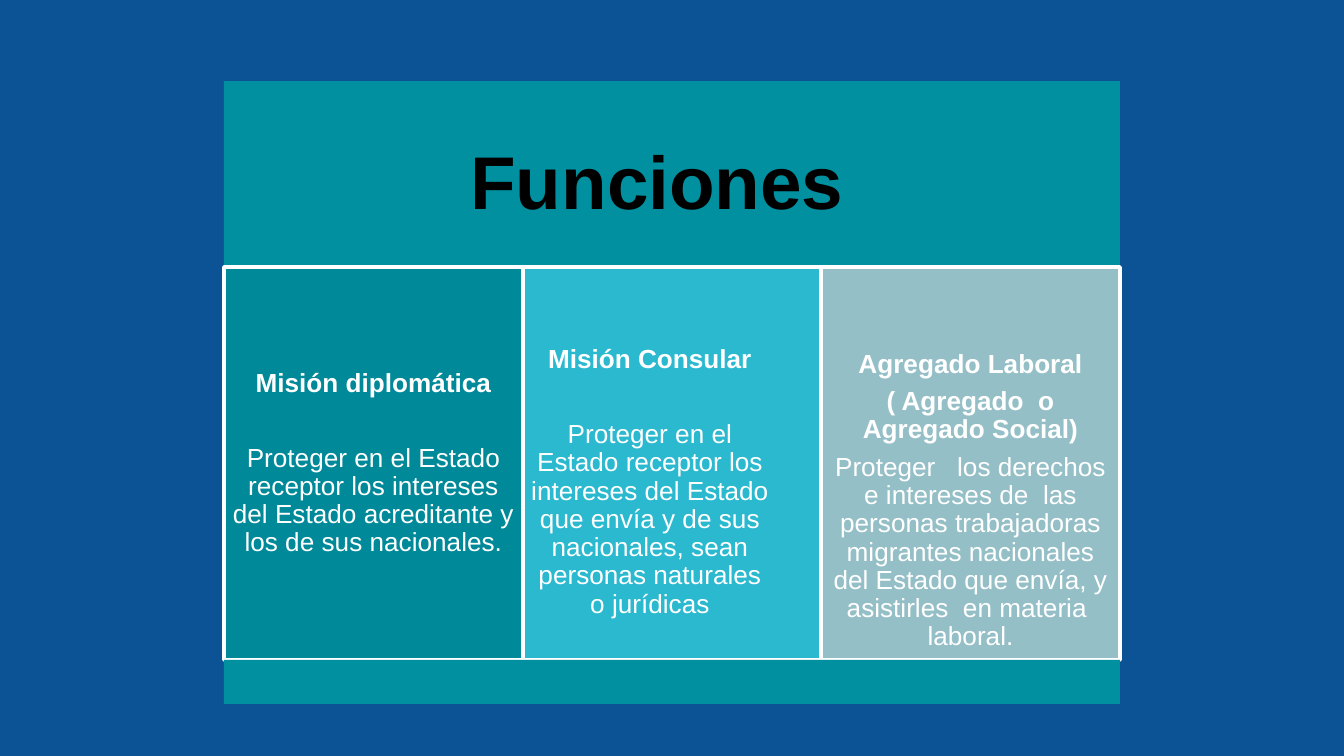
import pptx
import pptx.util
import pptx.dml.color
import pptx.enum.shapes
import pptx.enum.text

RGBColor = pptx.dml.color.RGBColor
NAVY = RGBColor(0x0B, 0x53, 0x94)
TEAL = RGBColor(0x00, 0x90, 0xA0)
DARK_TEAL = RGBColor(0x00, 0x89, 0x98)
CYAN = RGBColor(0x2B, 0xB9, 0xCF)
GREY_BLUE = RGBColor(0x95, 0xBF, 0xC7)
WHITE = RGBColor(0xFF, 0xFF, 0xFF)
BLACK = RGBColor(0x00, 0x00, 0x00)

LEFT, WIDTH = 224, 896
HEADER_TOP, COLUMNS_TOP, FOOTER_TOP, BOTTOM = 81, 267, 660, 704
PADDING = 8
EMPTY_LINE = 20

MISSIONS = [
    (DARK_TEAL, PADDING, [
        ("Misión diplomática", True, 0, 0),
        ("Proteger en el Estado receptor los intereses del Estado "
         "acreditante y los de sus nacionales.", False, EMPTY_LINE, 0),
    ]),
    (CYAN, 46, [
        ("Misión Consular", True, 0, 44),
        ("Proteger en el Estado receptor los intereses del Estado que envía "
         "y de sus nacionales, sean personas naturales o jurídicas",
         False, EMPTY_LINE, 0),
    ]),
    (GREY_BLUE, 83, [
        ("Agregado Laboral", True, 0, 0),
        ("( Agregado  o Agregado Social)", True, 0, 0),
        ("Proteger   los derechos e intereses de  las personas trabajadoras "
         "migrantes nacionales del Estado que envía, y asistirles  en materia  "
         "laboral.", False, 0, 0),
    ]),
]


def px(length):
    return pptx.util.Emu(round(length * 914400 / 134.4))


def add_panel(slide, left, top, right, bottom, fill, outlined=False):
    panel = slide.shapes.add_shape(
        pptx.enum.shapes.MSO_SHAPE.RECTANGLE,
        px(left), px(top), px(right - left), px(bottom - top))
    panel.shadow.inherit = False
    panel.fill.solid()
    panel.fill.fore_color.rgb = fill
    if outlined:
        panel.line.color.rgb = WHITE
        panel.line.width = pptx.util.Pt(2)
    else:
        panel.line.fill.background()
    return panel


def set_frame(panel, padding, top_padding):
    frame = panel.text_frame
    frame.word_wrap = True
    frame.vertical_anchor = pptx.enum.text.MSO_ANCHOR.MIDDLE
    frame.margin_left = frame.margin_right = frame.margin_bottom = px(padding)
    frame.margin_top = px(top_padding)
    return frame


def set_paragraph(paragraph, after, before=0, right_indent=0):
    paragraph.alignment = pptx.enum.text.PP_ALIGN.CENTER
    paragraph.line_spacing = 0.9
    paragraph.space_before = pptx.util.Pt(before)
    paragraph.space_after = pptx.util.Pt(after)
    if right_indent:
        paragraph._p.get_or_add_pPr().set("marR", str(px(right_indent)))


def add_run(paragraph, text, size, color, bold):
    run = paragraph.add_run()
    run.text = text
    run.font.name = "Arial"
    run.font.size = pptx.util.Pt(size)
    run.font.bold = bold
    run.font.color.rgb = color


def add_header(slide):
    header = add_panel(slide, LEFT, HEADER_TOP, LEFT + WIDTH, COLUMNS_TOP, TEAL)
    title = set_frame(header, 23, 23).paragraphs[0]
    set_paragraph(title, 20)
    add_run(title, "Funciones", 40, BLACK, True)
    add_run(title, " ", 58, BLACK, False)


def add_mission(slide, index, fill, top_padding, paragraphs):
    left, right = (LEFT + round(WIDTH * edge / len(MISSIONS))
                   for edge in (index, index + 1))
    column = add_panel(slide, left, COLUMNS_TOP, right, FOOTER_TOP, fill, True)
    frame = set_frame(column, PADDING, top_padding)
    for number, (text, bold, before, right_indent) in enumerate(paragraphs):
        paragraph = frame.add_paragraph() if number else frame.paragraphs[0]
        set_paragraph(paragraph, 5, before, right_indent)
        add_run(paragraph, text, 14, WHITE, bold)


def main():
    deck = pptx.Presentation()
    deck.slide_width, deck.slide_height = px(1344), px(756)
    slide = deck.slides.add_slide(deck.slide_layouts[6])
    slide.background.fill.solid()
    slide.background.fill.fore_color.rgb = NAVY
    add_header(slide)
    for index, mission in enumerate(MISSIONS):
        add_mission(slide, index, *mission)
    add_panel(slide, LEFT, FOOTER_TOP, LEFT + WIDTH, BOTTOM, TEAL)
    deck.save("out.pptx")


if __name__ == "__main__":
    main()
